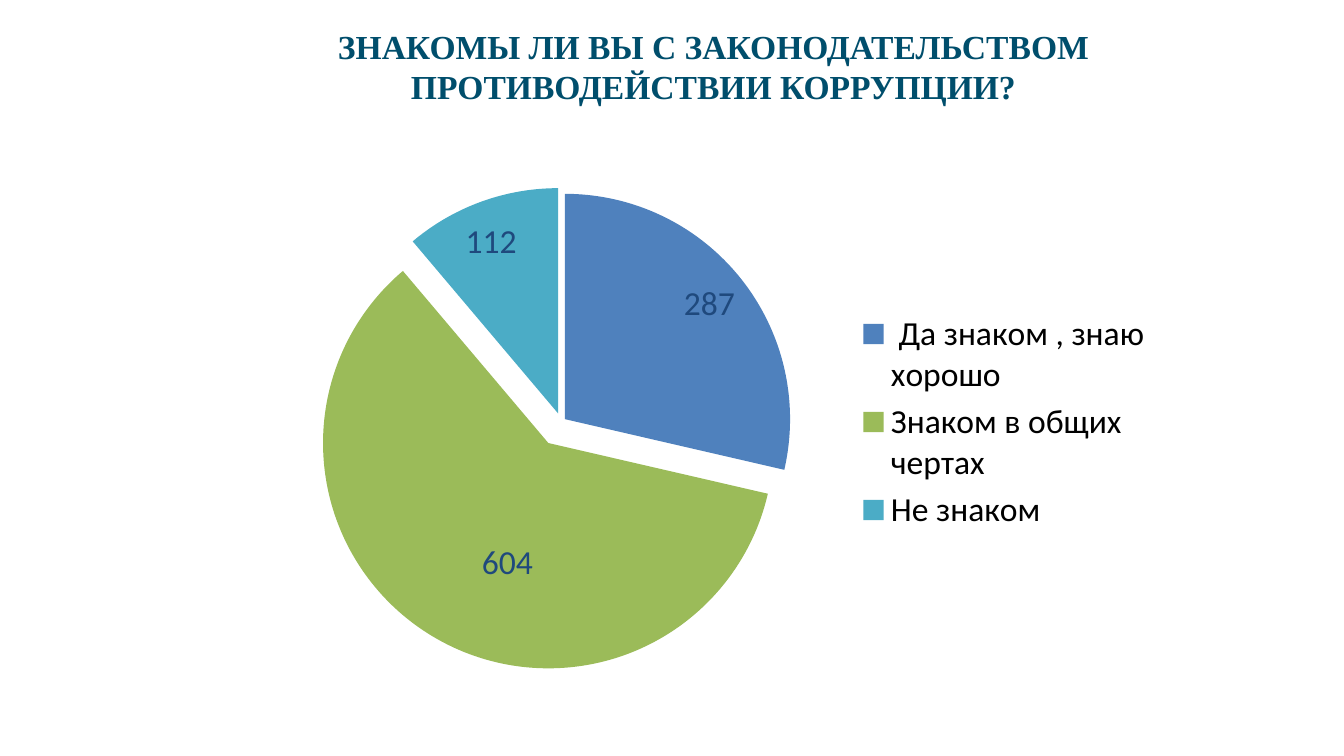
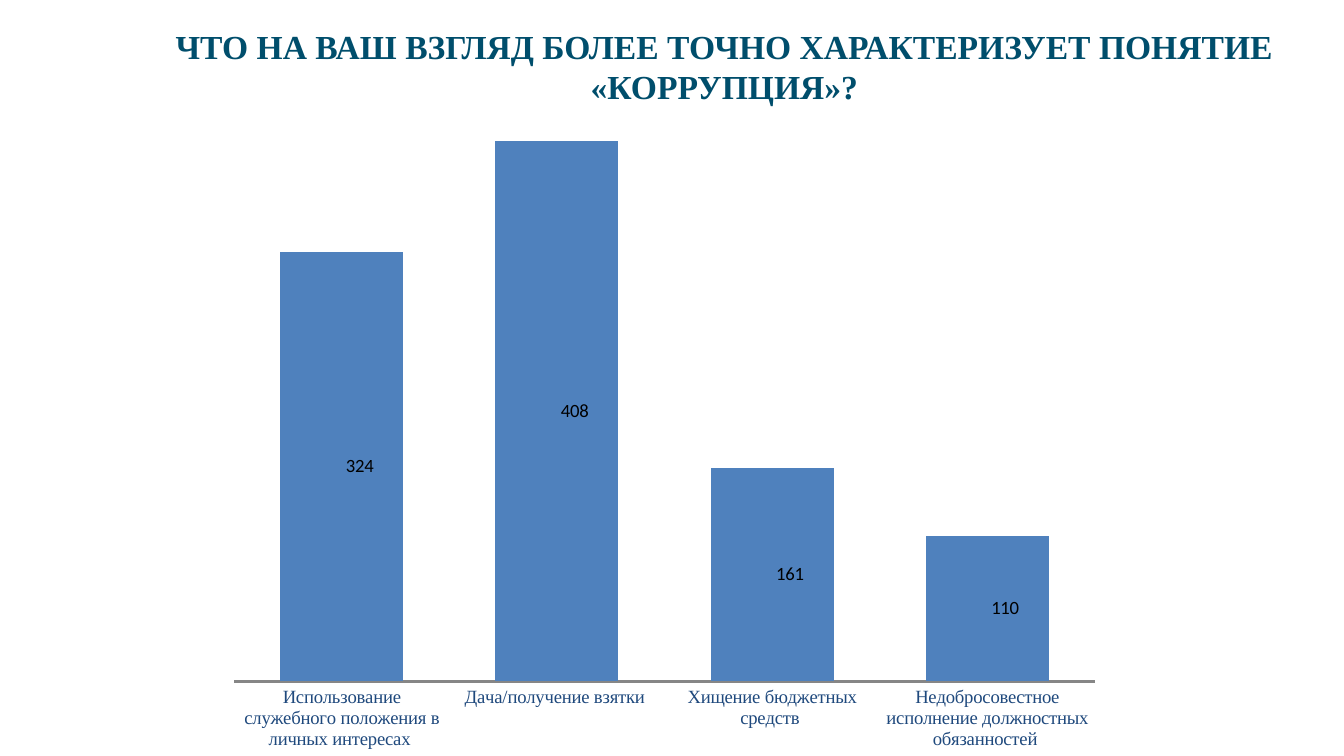
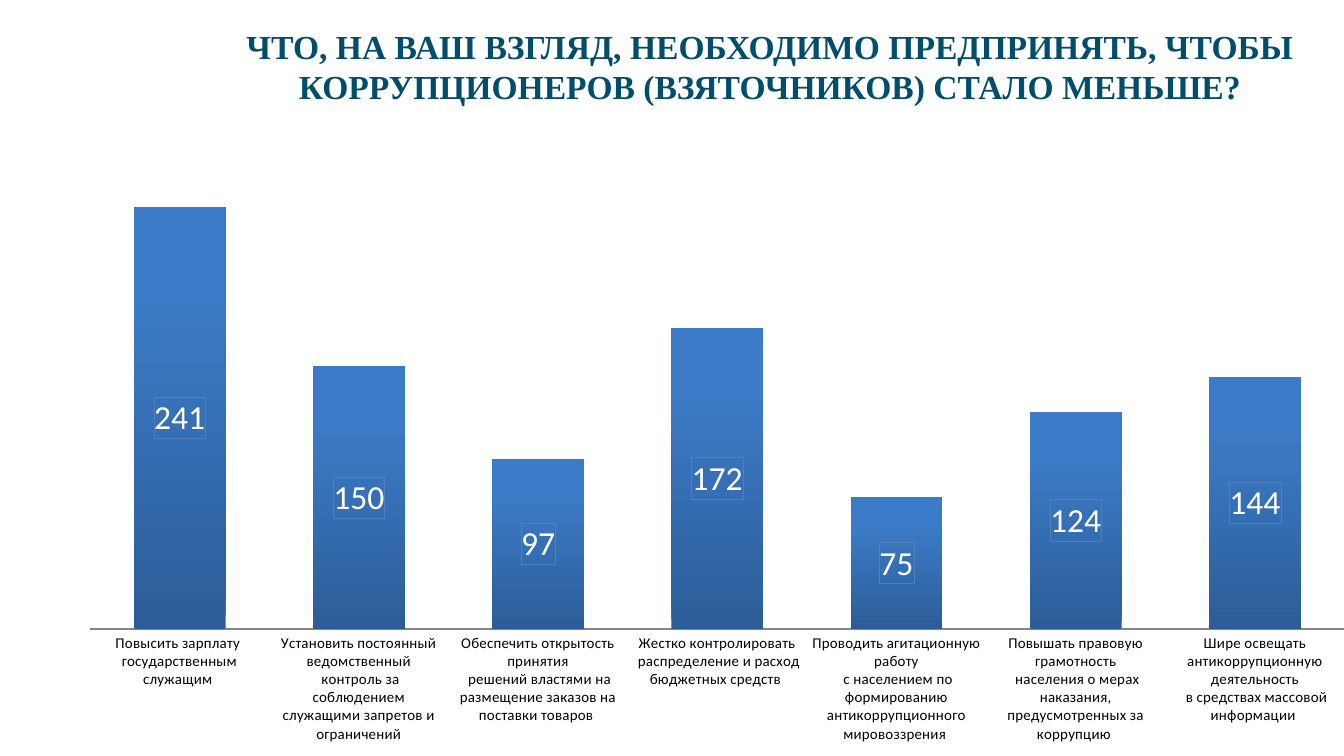
import pptx
import pptx.chart.data
import pptx.dml.color
import pptx.enum.chart
import pptx.enum.text
import pptx.oxml
import pptx.oxml.ns
import pptx.util
from dataclasses import dataclass

Inches, Pt = pptx.util.Inches, pptx.util.Pt
ChartType = pptx.enum.chart.XL_CHART_TYPE
Position = pptx.enum.chart.XL_LABEL_POSITION


@dataclass(frozen=True)
class Theme:
    title_font: str = "Times New Roman"
    body_font: str = "Calibri"
    title: str = "004E6C"
    text: str = "000000"
    navy: str = "1F497D"
    white: str = "FFFFFF"
    axis: str = "868686"
    blue: str = "4F81BD"
    green: str = "9BBB59"
    teal: str = "4BACC6"
    gradient: tuple = ((0, "2C5D98"), (0.8, "3C7BC7"))
    large: int = 18
    small: int = 10
    tiny: int = 8


THEME = Theme()
SLIDE_WIDTH = 10
SLIDE_HEIGHT = SLIDE_WIDTH * 9 / 16
TITLE_TOP, TITLE_WIDTH, TITLE_HEIGHT = 0.14, 8.5, 1.12

# Content: answers are (category, votes)
SURVEY = [
    dict(
        title="ЗНАКОМЫ ЛИ ВЫ С ЗАКОНОДАТЕЛЬСТВОМ ПРОТИВОДЕЙСТВИИ КОРРУПЦИИ?",
        title_left=1.06,
        box=(2.01, 0.92, 6.67, 4.44),
        kind="pie",
        answers=[(" Да знаком , знаю хорошо ", 287),
                 ("Знаком в общих чертах", 604),
                 ("Не знаком ", 112)],
        size=THEME.large,
        label_color=THEME.navy,
        label_places=[(Position.INSIDE_END, 0, 0), (Position.CENTER, 0.02, 0.04),
                      (Position.INSIDE_END, -0.02, 0.02)],
        explosion=21,
        slices=[(THEME.blue, 2), (THEME.green, 11), (THEME.teal, 4)],
    ),
    dict(
        title="ЧТО НА ВАШ ВЗГЛЯД БОЛЕЕ ТОЧНО ХАРАКТЕРИЗУЕТ ПОНЯТИЕ «КОРРУПЦИЯ»?",
        title_left=1.14,
        box=(1.61, 0.53, 6.67, 5.16),
        kind="column",
        answers=[("Использование служебного положения в личных интересах ", 324),
                 ("Дача/получение взятки ", 408),
                 ("Хищение бюджетных средств ", 161),
                 ("Недобросовестное исполнение должностных обязанностей ", 110)],
        size=THEME.small,
        label_color=THEME.text,
        label_places=[(Position.CENTER, 0.02, 0)] * 4,
        axis_format=dict(font=THEME.title_font, size=THEME.small, color=THEME.navy),
        axis_width=1.5, gap=75, maximum=450,
        plot_area=(0.02, 0.02, 0.96, 0.86),
    ),
    dict(
        title="ЧТО, НА ВАШ ВЗГЛЯД, НЕОБХОДИМО ПРЕДПРИНЯТЬ, ЧТОБЫ "
              "КОРРУПЦИОНЕРОВ (ВЗЯТОЧНИКОВ) СТАЛО МЕНЬШЕ?",
        title_left=1.48,
        box=(0.36, 0.77, 9.65, 5.04),
        kind="column",
        answers=[
            ("Повысить зарплату \nгосударственным служащим ", 241),
            ("Установить постоянный ведомственный\n контроль за соблюдением "
             "служащими запретов и ограничений", 150),
            ("Обеспечить открытость принятия\n решений властями на размещение "
             "заказов на поставки товаров ", 97),
            ("Жестко контролировать\n распределение и расход бюджетных средств ", 172),
            ("Проводить агитационную работу\n с населением по формированию "
             "антикоррупционного мировоззрения ", 75),
            ("Повышать правовую грамотность\n населения о мерах наказания, "
             "предусмотренных за коррупцию ", 124),
            ("Шире освещать антикоррупционную деятельность\n в средствах "
             "массовой информации ", 144)],
        size=THEME.large,
        label_color=THEME.white,
        label_outline=THEME.blue,
        axis_format=dict(font=THEME.body_font, size=THEME.tiny, color=THEME.text),
        axis_width=0.75, gap=95, maximum=300,
        plot_area=(0.31 / 9.65, 0, 9.34 / 9.65, 3.91 / 5.04),
        gradient=THEME.gradient,
    ),
]


def rgb(value):
    return pptx.dml.color.RGBColor.from_string(value)


def format_font(target, font=THEME.body_font, size=THEME.large, color=THEME.text, bold=False):
    target.name, target.size, target.bold = font, Pt(size), bold
    target.color.rgb = rgb(color)


def write_text(shape, text, **text_format):
    paragraph = shape.text_frame.paragraphs[0]
    paragraph.alignment = pptx.enum.text.PP_ALIGN.CENTER
    run = paragraph.add_run()
    run.text = text
    format_font(run.font, **text_format)


def chart_element(name, content="", attributes=""):
    namespaces = pptx.oxml.ns.nsdecls("c", "a")
    return pptx.oxml.parse_xml(f"<c:{name} {namespaces} {attributes}>{content}</c:{name}>")


def layout_element(**values):
    children = "".join(f'<c:{name} val="{value}"/>' for name, value in values.items())
    return chart_element("layout", f"<c:manualLayout>{children}</c:manualLayout>")


def explosion_element(percent):
    return chart_element("explosion", attributes=f'val="{percent}"')


def add_title(slide, question):
    title = slide.shapes.title
    title.left, title.top = Inches(question["title_left"]), Inches(TITLE_TOP)
    title.width, title.height = Inches(TITLE_WIDTH), Inches(TITLE_HEIGHT)
    title.text_frame.word_wrap = True
    title.text_frame.auto_size = pptx.enum.text.MSO_AUTO_SIZE.NONE
    title.text_frame.vertical_anchor = pptx.enum.text.MSO_ANCHOR.TOP
    write_text(title, question["title"], font=THEME.title_font, color=THEME.title, bold=True)


def add_labels(series, question):
    label_format = dict(size=question["size"], color=question["label_color"])
    labels = series.data_labels
    labels.show_value = True
    labels.position = Position.CENTER
    format_font(labels.font, **label_format)
    for index, (position, right, down) in enumerate(question.get("label_places", [])):
        label = series.points[index].data_label
        format_font(label.font, **label_format)
        label.position = position
        if right or down:
            marker = labels._element.xpath(f"c:dLbl/c:idx[@val='{index}']")[0]
            marker.addnext(layout_element(x=right, y=down))
    if "label_outline" in question:
        outline = chart_element(
            "spPr", '<a:ln w="3175"><a:solidFill>'
            f'<a:srgbClr val="{question["label_outline"]}"/></a:solidFill></a:ln>')
        labels._element.xpath("c:txPr")[0].addprevious(outline)


def format_pie(chart, series, question):
    for index, (color, explosion) in enumerate(question["slices"]):
        point = series.points[index]
        point.format.fill.solid()
        point.format.fill.fore_color.rgb = rgb(color)
        marker = series._element.xpath(f"c:dPt/c:idx[@val='{index}']")[0]
        marker.addnext(explosion_element(explosion))
    # The series value sets the pie's radius, the points their own offsets
    first_point = series._element.xpath("c:dPt")[0]
    first_point.addprevious(explosion_element(question["explosion"]))
    chart.has_legend = True
    chart.legend.position = pptx.enum.chart.XL_LEGEND_POSITION.RIGHT
    chart.legend.include_in_layout = False
    format_font(chart.legend.font)


def format_columns(chart, series, question):
    chart.has_legend = False
    plot = chart.plots[0]
    plot.vary_by_categories = False
    plot.gap_width, plot.overlap = question["gap"], 100
    # Column fill
    fill = series.format.fill
    if "gradient" in question:
        fill.gradient()
        fill.gradient_angle = 90
        for stop, (position, color) in zip(fill.gradient_stops, question["gradient"]):
            stop.position, stop.color.rgb = position, rgb(color)
    else:
        fill.solid()
        fill.fore_color.rgb = rgb(THEME.blue)
    # Axes
    chart.value_axis.visible = False
    chart.value_axis.has_major_gridlines = False
    chart.value_axis.minimum_scale = 0
    chart.value_axis.maximum_scale = question["maximum"]
    axis = chart.category_axis
    axis.major_tick_mark = pptx.enum.chart.XL_TICK_MARK.NONE
    axis.format.line.color.rgb = rgb(THEME.axis)
    axis.format.line.width = Pt(question["axis_width"])
    format_font(axis.tick_labels.font, **question["axis_format"])
    # Plot area as shares of the chart
    area = chart._chartSpace.xpath("c:chart/c:plotArea")[0]
    for old_layout in area.xpath("c:layout"):
        area.remove(old_layout)
    left, top, width, height = question["plot_area"]
    area.insert(0, layout_element(layoutTarget="inner", xMode="edge", yMode="edge",
                                  x=left, y=top, w=width, h=height))


CHARTS = {"pie": (ChartType.PIE, format_pie),
          "column": (ChartType.COLUMN_STACKED, format_columns)}


def add_survey_chart(slide, question):
    chart_type, format_chart = CHARTS[question["kind"]]
    categories, votes = zip(*question["answers"])
    data = pptx.chart.data.CategoryChartData()
    data.categories = categories
    data.add_series("Series 1", votes)
    box = [Inches(length) for length in question["box"]]
    chart = slide.shapes.add_chart(chart_type, *box, data).chart
    chart.has_title = False
    format_font(chart.font, size=question["size"])
    series = chart.plots[0].series[0]
    format_chart(chart, series, question)
    add_labels(series, question)


def main():
    presentation = pptx.Presentation()
    presentation.slide_width = Inches(SLIDE_WIDTH)
    presentation.slide_height = Inches(SLIDE_HEIGHT)
    title_only = presentation.slide_layouts[5]
    for question in SURVEY:
        slide = presentation.slides.add_slide(title_only)
        add_title(slide, question)
        add_survey_chart(slide, question)
    presentation.save("out.pptx")


if __name__ == "__main__":
    main()
